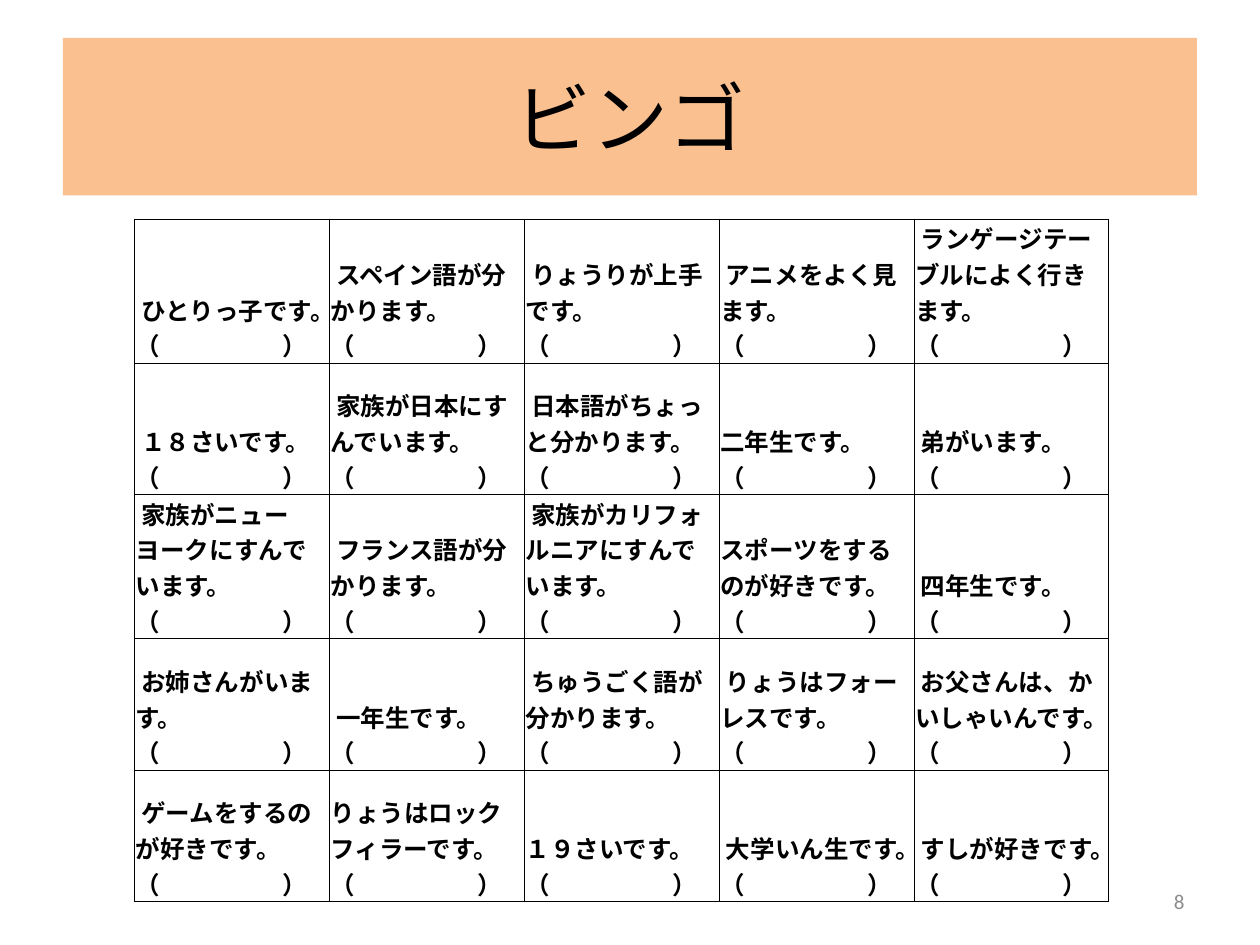
import pptx
import pptx.dml.color
import pptx.enum.lang
import pptx.enum.shapes
import pptx.enum.text
import pptx.oxml
import pptx.oxml.ns
import pptx.util

Pt = pptx.util.Pt
ALIGN = pptx.enum.text.PP_ALIGN
ANCHOR = pptx.enum.text.MSO_ANCHOR

BLANK = "（　　　　　）"
SQUARES = [
    [" ひとりっ子です。", " スペイン語が分かります。", " りょうりが上手です。",
     " アニメをよく見ます。", " ランゲージテーブルによく行きます。"],
    [" １８さいです。", " 家族が日本にすんでいます。", " 日本語がちょっと分かります。",
     "二年生です。", " 弟がいます。"],
    [" 家族がニューヨークにすんでいます。", " フランス語が分かります。",
     " 家族がカリフォルニアにすんでいます。", "スポーツをするのが好きです。",
     " 四年生です。"],
    [" お姉さんがいます。", " 一年生です。", " ちゅうごく語が分かります。",
     " りょうはフォーレスです。", " お父さんは、かいしゃいんです。"],
    [" ゲームをするのが好きです。", "りょうはロックフィラーです。", "１９さいです。",
     " 大学いん生です。", " すしが好きです。"],
]
TALL, SHORT = 82.3, 75.1
ROW_HEIGHTS = [TALL, SHORT, TALL, SHORT, SHORT]


def rgb(value):
    return pptx.dml.color.RGBColor.from_string(value)


def write(tf, text, size=14, font="Calibri", color="000000", bold=False,
          align=ALIGN.LEFT):
    """Fill a text frame, one paragraph for each line of text."""
    tf.word_wrap = True
    for i, line in enumerate(text.split("\n")):
        p = tf.paragraphs[0] if i == 0 else tf.add_paragraph()
        p.alignment = align
        r = p.add_run()
        r.text = line
        r.font.size = Pt(size)
        r.font.name = font
        r.font.bold = bold
        r.font.color.rgb = rgb(color)
        r.font.language_id = pptx.enum.lang.MSO_LANGUAGE_ID.JAPANESE


def border(cell, color, width):
    """Draw all four sides of a table cell."""
    tcPr = cell._tc.get_or_add_tcPr()
    for i, side in enumerate(("lnL", "lnR", "lnT", "lnB")):
        tcPr.insert(i, pptx.oxml.parse_xml(
            f'<a:{side} {pptx.oxml.ns.nsdecls("a")} w="{Pt(width)}">'
            f'<a:solidFill><a:srgbClr val="{color}"/></a:solidFill></a:{side}>'))


class BingoSlide:
    ink = "000000"
    banner_fill = "FAC090"
    number_ink = "8C8C8C"

    def __init__(self, prs):
        self.s = prs.slides.add_slide(prs.slide_layouts[6])

    def banner(self, text, x, y, w, h):
        sp = self.s.shapes.add_shape(
            pptx.enum.shapes.MSO_SHAPE.RECTANGLE, Pt(x), Pt(y), Pt(w), Pt(h))
        sp.shadow.inherit = False
        sp.fill.solid()
        sp.fill.fore_color.rgb = rgb(self.banner_fill)
        sp.line.fill.background()
        sp.text_frame.vertical_anchor = ANCHOR.MIDDLE
        write(sp.text_frame, text, size=44, color=self.ink, align=ALIGN.CENTER)

    def number(self, text, x, y, w, h):
        tf = self.s.shapes.add_textbox(Pt(x), Pt(y), Pt(w), Pt(h)).text_frame
        tf.vertical_anchor = ANCHOR.MIDDLE
        write(tf, text, size=12, color=self.number_ink, align=ALIGN.RIGHT)

    def grid(self, rows, x, y, col_w, heights):
        n_rows, n_cols = len(rows), len(rows[0])
        table = self.s.shapes.add_table(
            n_rows, n_cols, Pt(x), Pt(y), Pt(col_w * n_cols), Pt(sum(heights))).table
        table.first_row = table.horz_banding = False
        for col in table.columns:
            col.width = Pt(col_w)
        for row, height, texts in zip(table.rows, heights, rows):
            row.height = Pt(height)
            for cell, text in zip(row.cells, texts):
                self.square(cell, text)

    def square(self, cell, text):
        cell.margin_left = cell.margin_right = cell.margin_top = Pt(0.7)
        cell.margin_bottom = 0
        cell.vertical_anchor = ANCHOR.BOTTOM
        cell.fill.background()
        border(cell, self.ink, 0.5)
        write(cell.text_frame, f"{text}\n{BLANK}", font="Lato", color=self.ink, bold=True)


def main():
    prs = pptx.Presentation()
    prs.slide_width, prs.slide_height = Pt(720), Pt(540)
    slide = BingoSlide(prs)
    slide.banner("ビンゴ", 36, 21.6, 648, 90)
    slide.number("8", 516, 500.5, 168, 28.75)
    slide.grid(SQUARES, 76.9, 125.2, 111.35, ROW_HEIGHTS)
    prs.save("out.pptx")


if __name__ == "__main__":
    main()
